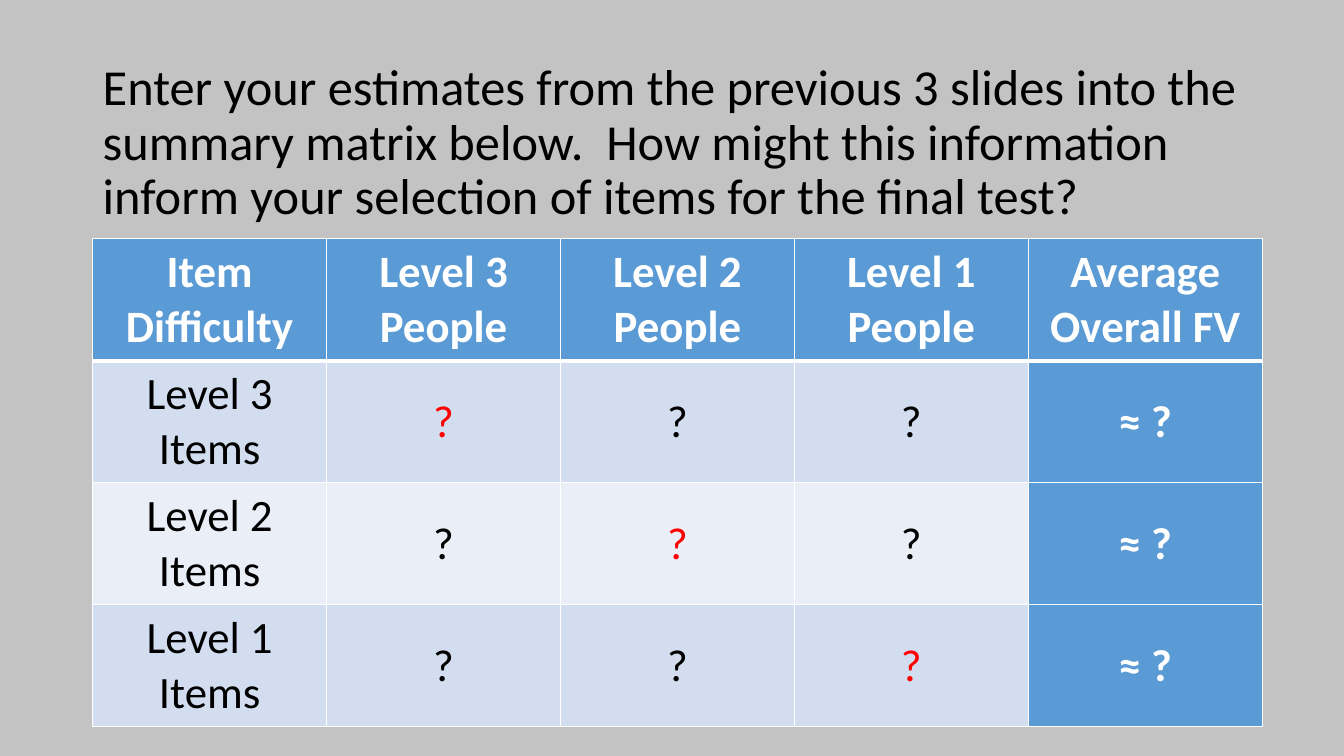
import dataclasses

import lxml.etree
import pptx
import pptx.dml.color
import pptx.enum.text
import pptx.oxml.ns
import pptx.util


@dataclasses.dataclass(frozen=True)
class Theme:
    """Colours, font and type sizes of the slide."""
    font: str = "Calibri"
    backdrop: str = "C4C3C3"
    ink: str = "000000"
    white: str = "FFFFFF"
    highlight: str = "FF0000"
    accent: str = "5B9BD5"
    bands: tuple = ("D2DEEF", "EAEFF7")
    prompt_size: int = 36
    matrix_size: int = 32
    thin: int = 1
    thick: int = 3


THEME = Theme()
WIDTH = pptx.util.Inches(13.33)
HEIGHT = pptx.util.Inches(7.5)
LEFT = pptx.util.Inches(0.92)
COLUMN = pptx.util.Inches(2.32)
ROW = pptx.util.Inches(1.21)
PROMPT = ("Enter your estimates from the previous 3 slides into the summary matrix below.  "
          "How might this information inform your selection of items for the final test?")
LEVELS = (3, 2, 1)


def rgb(code):
    """Turn a hex code into a colour."""
    return pptx.dml.color.RGBColor.from_string(code)


def style_text(paragraph, size, colour, bold=False):
    """Format every run of a paragraph."""
    for run in paragraph.runs:
        run.font.name = THEME.font
        run.font.size = pptx.util.Pt(size)
        run.font.bold = bold
        run.font.color.rgb = rgb(colour)


def add_prompt(slide):
    """Add the question above the matrix."""
    prompt = slide.shapes.add_textbox(
        LEFT, pptx.util.Inches(0.4), pptx.util.Inches(11.5), pptx.util.Inches(2.06))
    frame = prompt.text_frame
    frame.word_wrap = True
    frame.vertical_anchor = pptx.enum.text.MSO_ANCHOR.MIDDLE
    frame.text = PROMPT
    frame.paragraphs[0].line_spacing = 0.9
    style_text(frame.paragraphs[0], THEME.prompt_size, THEME.ink)


def add_borders(cell, top, bottom):
    """Draw white lines on all four sides of a cell."""
    properties = cell._tc.get_or_add_tcPr()
    qn = pptx.oxml.ns.qn
    sides = {"L": THEME.thin, "R": THEME.thin, "T": top, "B": bottom}
    for side, weight in sides.items():
        line = lxml.etree.SubElement(
            properties, qn(f"a:ln{side}"), w=str(int(pptx.util.Pt(weight))))
        fill = lxml.etree.SubElement(line, qn("a:solidFill"))
        lxml.etree.SubElement(fill, qn("a:srgbClr"), val=THEME.white)


def fill_cell(cell, wording, row, column, last_column):
    """Write and style one cell according to its place in the matrix."""
    emphasised = row == 0 or column == last_column
    if emphasised:
        ink, ground = THEME.white, THEME.accent
    else:
        ink = THEME.highlight if row == column else THEME.ink
        ground = THEME.bands[(row - 1) % len(THEME.bands)]
    add_borders(cell,
                top=THEME.thick if row == 1 else THEME.thin,
                bottom=THEME.thick if row == 0 else THEME.thin)
    cell.fill.solid()
    cell.fill.fore_color.rgb = rgb(ground)
    cell.vertical_anchor = pptx.enum.text.MSO_ANCHOR.MIDDLE
    cell.text_frame.text = wording
    paragraph = cell.text_frame.paragraphs[0]
    paragraph.alignment = pptx.enum.text.PP_ALIGN.CENTER
    style_text(paragraph, THEME.matrix_size, ink, emphasised)


def add_matrix(slide):
    """Add the summary matrix of item and people levels."""
    header = ["Item Difficulty", *(f"Level {level} People" for level in LEVELS),
              "Average Overall FV"]
    entries = [header] + [
        [f"Level {level} Items", *("?" for _ in LEVELS), "≈ ?"] for level in LEVELS]
    matrix = slide.shapes.add_table(
        len(entries), len(header), LEFT, pptx.util.Inches(2.37),
        COLUMN * len(header), ROW * len(entries)).table
    for column in matrix.columns:
        column.width = COLUMN
    for row, wordings in enumerate(entries):
        matrix.rows[row].height = ROW
        for column, wording in enumerate(wordings):
            fill_cell(matrix.cell(row, column), wording, row, column, len(header) - 1)


def main():
    """Build and save the slide."""
    deck = pptx.Presentation()
    deck.slide_width, deck.slide_height = WIDTH, HEIGHT
    slide = deck.slides.add_slide(deck.slide_layouts[6])
    slide.background.fill.solid()
    slide.background.fill.fore_color.rgb = rgb(THEME.backdrop)
    add_prompt(slide)
    add_matrix(slide)
    deck.save("out.pptx")


if __name__ == "__main__":
    main()
